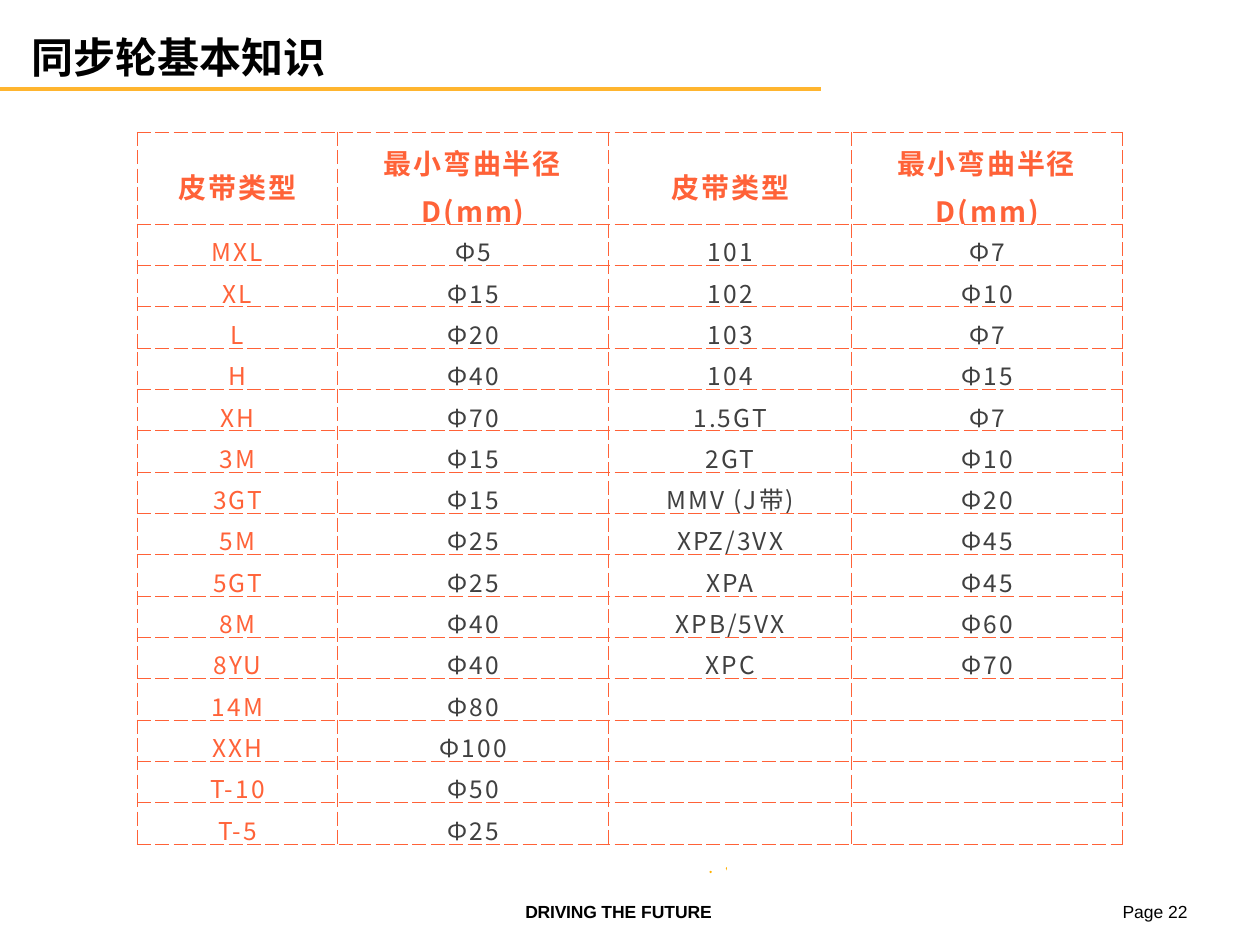
from lxml.etree import SubElement as Sub
from pptx import Presentation
from pptx.dml.color import RGBColor as RGB
from pptx.enum.text import MSO_ANCHOR as Anchor, MSO_AUTO_SIZE as Fit, PP_ALIGN as Align
from pptx.oxml.ns import qn
from pptx.util import Inches, Pt

BLACK = RGB(0, 0, 0)
WHITE = RGB(255, 255, 255)
GRAY = RGB(0x40, 0x40, 0x40)
ORANGE = RGB(0xFF, 0x62, 0x38)
AMBER = RGB(0xFF, 0xB5, 0x2F)
GOLD = RGB(0xFF, 0xB2, 0x00)
CJK = "Noto Sans CJK SC"

TITLE = "同步轮基本知识"
HEAD = ["皮带类型", "最小弯曲半径 D(mm)"] * 2
LEFT = [
    ("MXL", 5), ("XL", 15), ("L", 20), ("H", 40), ("XH", 70),
    ("3M", 15), ("3GT", 15), ("5M", 25), ("5GT", 25), ("8M", 40),
    ("8YU", 40), ("14M", 80), ("XXH", 100), ("T-10", 50), ("T-5", 25),
]
RIGHT = [
    ("101", 7), ("102", 10), ("103", 7), ("104", 15), ("1.5GT", 7),
    ("2GT", 10), ("MMV (J带)", 20), ("XPZ/3VX", 45), ("XPA", 45),
    ("XPB/5VX", 60), ("XPC", 70),
]
COLS = [1.59, 2.15, 1.93, 2.15]
TALL, HEAD_H = 5.65, 0.73
ROW_H = (TALL - HEAD_H) / len(LEFT)
MARKS = [
    [(5.64, 6.91), (5.63, 6.92), (5.64, 6.93), (5.65, 6.92)],
    [(5.77, 6.88), (5.76, 6.89), (5.77, 6.91)],
]
NOTES = [
    ((2.84, 7.15, 3.33, 0.17), 1.33, [("DRIVING ", True, -10), ("THE FUTURE", True, 0)]),
    ((8.9, 7.15, 0.84, 0.17), 0.01, [("Page 22", False, 0)]),
]


def style(run, size, name, color, bold, gap=0):
    font = run.font
    for key, val in {"size": Pt(size), "name": name, "bold": bold}.items():
        setattr(font, key, val)
    font.color.rgb = color
    props = run._r.get_or_add_rPr()
    Sub(props, qn("a:ea")).set("typeface", name)
    if gap:
        props.set("spc", str(gap))


def frame(box):
    text = box.text_frame
    sides = ("left", "top", "right", "bottom")
    for key, val in {f"margin_{side}": 0 for side in sides}.items():
        setattr(text, key, val)
    text.word_wrap = True
    return text


def place(shape, spot):
    for key, val in zip(("left", "top", "width", "height"), spot):
        setattr(shape, key, Inches(val))


def edge(cell):
    props = cell._tc.get_or_add_tcPr()
    for spot, tag in enumerate(("lnL", "lnR", "lnT", "lnB")):
        line = props.makeelement(qn(f"a:{tag}"), {"w": str(Pt(0.75))})
        fill = Sub(line, qn("a:solidFill"))
        Sub(fill, qn("a:srgbClr")).set("val", str(ORANGE))
        Sub(line, qn("a:prstDash")).set("val", "sysDash")
        props.insert(spot, line)


def write(cell, text, size, color, bold):
    base = -0.05 if bold else -0.03
    pad = {"left": 0.19, "top": 0.01, "right": 0.19, "bottom": base}
    for side, val in pad.items():
        setattr(cell, f"margin_{side}", Inches(val))
    cell.vertical_anchor = Anchor.MIDDLE
    cell.fill.solid()
    cell.fill.fore_color.rgb = WHITE
    edge(cell)
    para = cell.text_frame.paragraphs[0]
    para.alignment = Align.CENTER
    para.line_spacing = 1.2
    if text:
        run = para.add_run()
        run.text = text
        style(run, size, CJK, color, bold, 120)
    else:
        Sub(para._p, qn("a:endParaRPr")).set("sz", str(size * 100))


def add_rule(slide):
    y = Inches(0.71)
    rule = slide.shapes.add_connector(1, 0, y, Inches(6.52), y)
    rule.line.color.rgb = AMBER
    rule.line.width = Pt(2.25)
    Sub(rule._element.spPr, qn("a:effectLst"))


def add_marks(slide):
    for mark in MARKS:
        dots = [(Inches(x), Inches(y)) for x, y in mark]
        pen = slide.shapes.build_freeform(*dots[0])
        pen.add_line_segments(dots[1:], close=True)
        shape = pen.convert_to_shape()
        shape.fill.solid()
        shape.fill.fore_color.rgb = GOLD
        shape.line.fill.background()
        shape.shadow.inherit = False


def add_grid(slide):
    rows = [HEAD]
    for i, (kind, size) in enumerate(LEFT):
        more = [RIGHT[i][0], f"Ф{RIGHT[i][1]}"] if i < len(RIGHT) else ["", ""]
        rows.append([kind, f"Ф{size}"] + more)
    spot = [Inches(v) for v in (1.09, 1.05, sum(COLS), TALL)]
    table = slide.shapes.add_table(len(rows), len(COLS), *spot).table
    table.first_row = table.horz_banding = False
    for col, wide in zip(table.columns, COLS):
        col.width = Inches(wide)
    for r, row in enumerate(rows):
        table.rows[r].height = Inches(ROW_H if r else HEAD_H)
        for c, text in enumerate(row):
            color = GRAY if r and c else ORANGE
            write(table.cell(r, c), text, 14 if r else 16, color, r == 0)


def add_notes(slide):
    for spot, dent, runs in NOTES:
        box = slide.shapes.add_textbox(*[Inches(v) for v in spot])
        text = frame(box)
        text.auto_size = Fit.SHAPE_TO_FIT_TEXT
        para = text.paragraphs[0]
        para._p.get_or_add_pPr().set("marL", str(Inches(dent)))
        for words, bold, gap in runs:
            run = para.add_run()
            run.text = words
            style(run, 10, "Arial", BLACK, bold, gap)


def set_title(slide):
    title = slide.shapes.title
    place(title, (0.25, 0.25, 5.09, 0.47))
    text = frame(title)
    text.auto_size = Fit.NONE
    text.vertical_anchor = Anchor.TOP
    para = text.paragraphs[0]
    para.alignment = Align.LEFT
    run = para.add_run()
    run.text = TITLE
    style(run, 24, CJK, BLACK, True)


def main():
    deck = Presentation()
    deck.slide_width, deck.slide_height = Inches(10), Inches(7.5)
    slide = deck.slides.add_slide(deck.slide_layouts[5])
    for step in (add_rule, add_marks, add_grid, add_notes, set_title):
        step(slide)
    deck.save("out.pptx")


if __name__ == "__main__":
    main()
